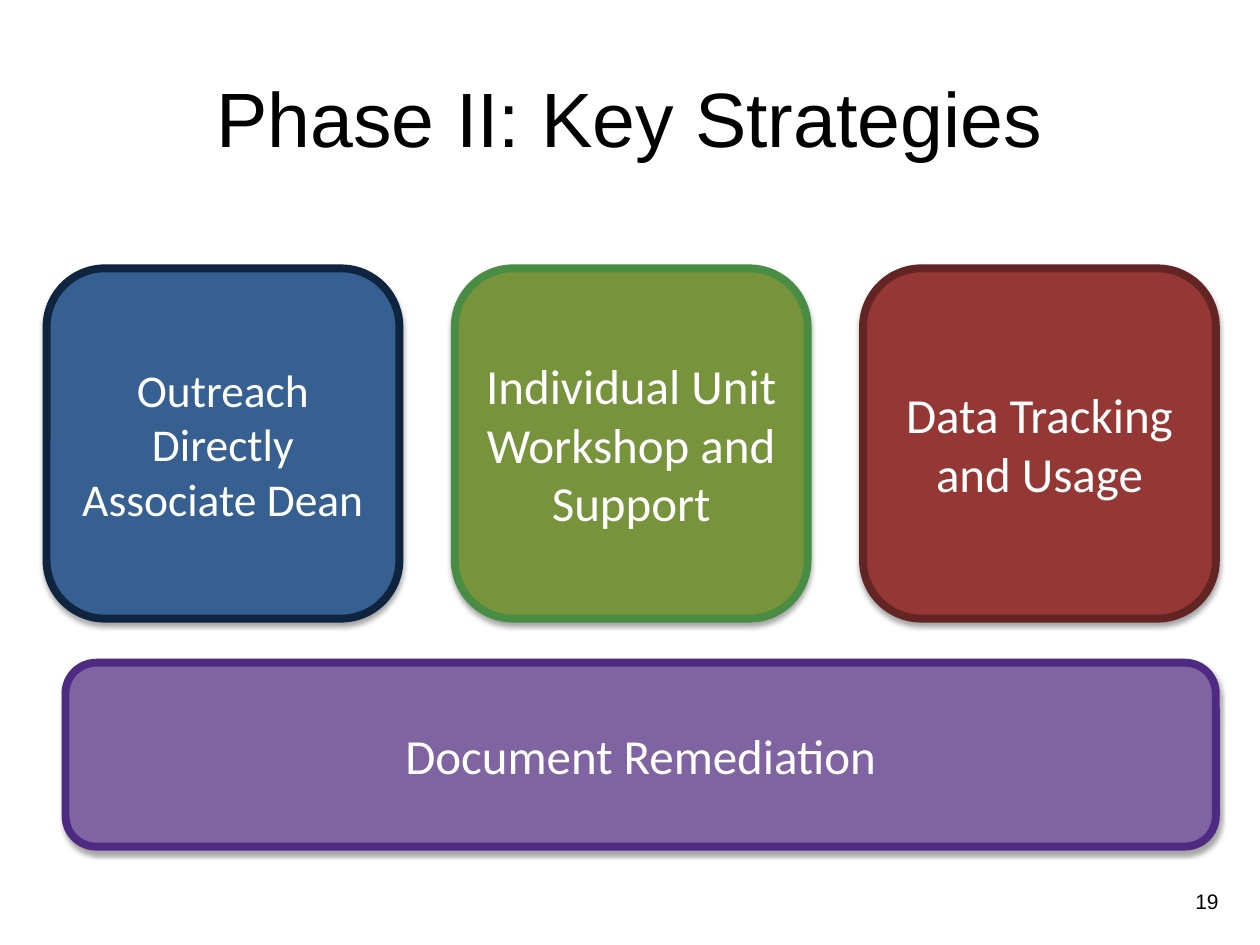
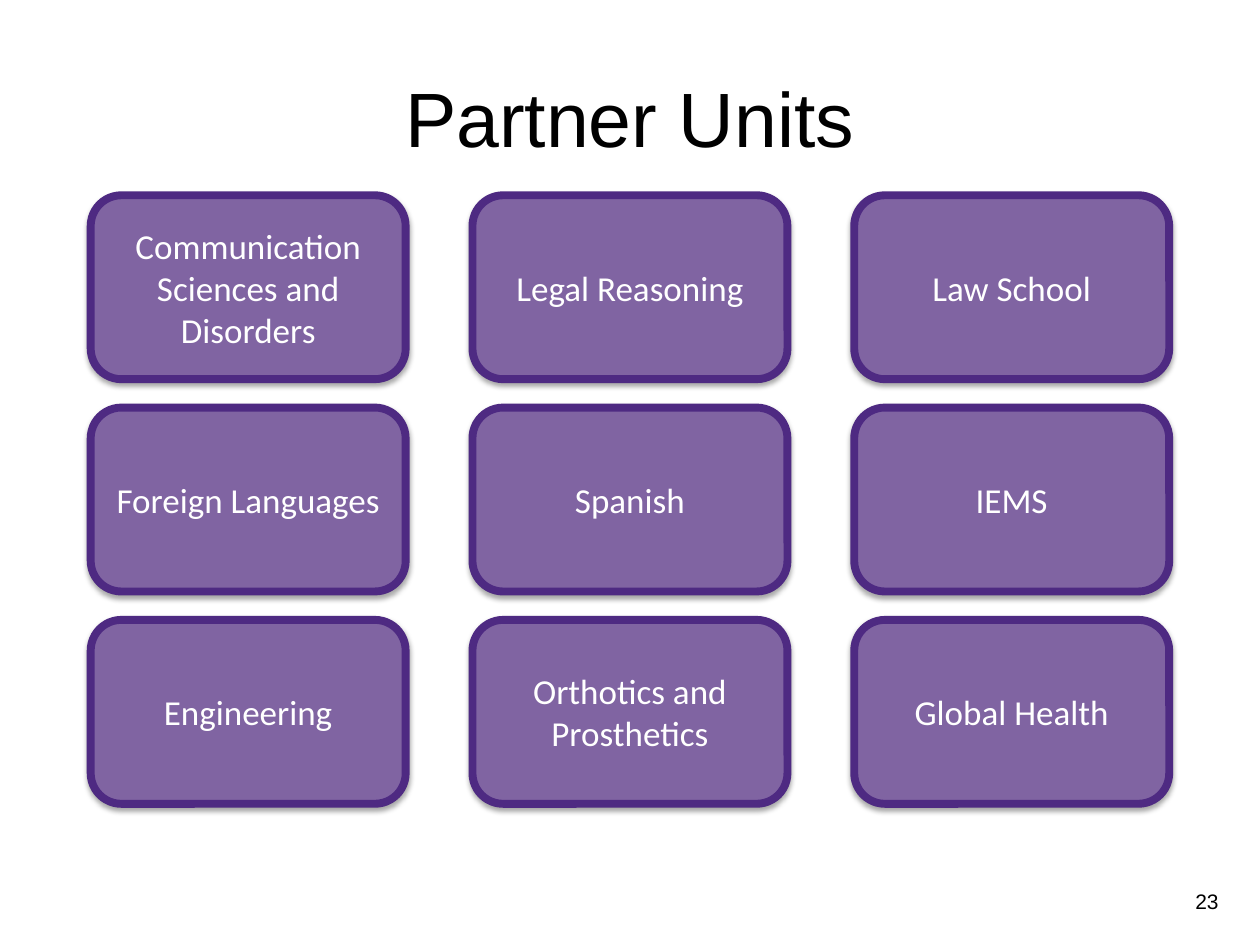
"""Build the key strategies and partner units slides."""
from dataclasses import dataclass

from lxml import etree
from pptx import Presentation
from pptx.dml.color import RGBColor
from pptx.enum import shapes, text
from pptx.oxml import ns
from pptx.util import Inches, Pt


@dataclass(frozen=True)
class Theme:
    heading_font: str = "Arial"
    card_font: str = "Calibri"
    black: str = "000000"
    white: str = "FFFFFF"
    blue: tuple = ("376092", "0F243E")
    green: tuple = ("77933C", "488D43")
    red: tuple = ("953735", "632523")
    purple: tuple = ("8064A2", "4E2A82")
    title_size: int = 44
    number_size: int = 12
    strategy_size: int = 28
    outreach_size: int = 26
    unit_size: int = 20
    border: float = 4.5


theme = Theme()


def write(box, words, font, size, color, align):
    frame = box.text_frame
    frame.word_wrap = True
    frame.vertical_anchor = text.MSO_ANCHOR.MIDDLE
    para = frame.paragraphs[0]
    para.alignment = align
    span = para.add_run()
    span.text = words
    span.font.name = font
    span.font.size = Pt(size)
    span.font.color.rgb = RGBColor.from_string(color)


def add_card(page, place, words, colors, size):
    card = page.shapes.add_shape(
        shapes.MSO_SHAPE.ROUNDED_RECTANGLE, *map(Inches, place))
    fill, line = map(RGBColor.from_string, colors)
    card.fill.solid()
    card.fill.fore_color.rgb = fill
    card.line.color.rgb = line
    card.line.width = Pt(theme.border)
    card.shadow.inherit = False
    effects = card._element.spPr.find(ns.qn("a:effectLst"))
    shadow = etree.SubElement(
        effects, ns.qn("a:outerShdw"), blurRad=str(Pt(3.1)),
        dist=str(Pt(1.8)), dir="5400000", rotWithShape="0")
    shade = etree.SubElement(shadow, ns.qn("a:srgbClr"), val=theme.black)
    etree.SubElement(shade, ns.qn("a:alpha"), val="35000")
    write(card, words, theme.card_font, size, theme.white, text.PP_ALIGN.CENTER)


deck = Presentation()
deck.slide_width = Inches(10)
deck.slide_height = Inches(7.5)

pages = []
for title, number in (("Phase II: Key Strategies", "19"), ("Partner Units", "23")):
    page = deck.slides.add_slide(deck.slide_layouts[6])
    page.background.fill.solid()
    page.background.fill.fore_color.rgb = RGBColor.from_string(theme.white)
    for place, words, size, align in (
        ((0.5, 0.3, 9, 1.25), title, theme.title_size, text.PP_ALIGN.CENTER),
        ((9.12, 6.95, 0.65, 0.4), number, theme.number_size, text.PP_ALIGN.RIGHT),
    ):
        box = page.shapes.add_textbox(*map(Inches, place))
        write(box, words, theme.heading_font, size, theme.black, align)
    pages.append(page)
strategies_page, units_page = pages

strategies = (
    ("Outreach Directly Associate Dean", theme.blue, theme.outreach_size),
    ("Individual Unit Workshop and Support", theme.green, theme.strategy_size),
    ("Data Tracking and Usage", theme.red, theme.strategy_size),
)
for column, (words, colors, size) in enumerate(strategies):
    place = (0.37 + 3.24 * column, 2.13, 2.8, 2.78)
    add_card(strategies_page, place, words, colors, size)
add_card(strategies_page, (0.52, 5.26, 9.13, 1.46), "Document Remediation",
         theme.purple, theme.strategy_size)

units = (
    ("Communication Sciences and Disorders", "Legal Reasoning", "Law School"),
    ("Foreign Languages", "Spanish", "IEMS"),
    ("Engineering", "Orthotics and Prosthetics", "Global Health"),
)
unit_pitch = (4.92 - 1.55) / 2
for row, names in enumerate(units):
    for column, name in enumerate(names):
        place = (0.72 + 3.03 * column, 1.55 + unit_pitch * row, 2.5, 1.46)
        add_card(units_page, place, name, theme.purple, theme.unit_size)

deck.save("out.pptx")
